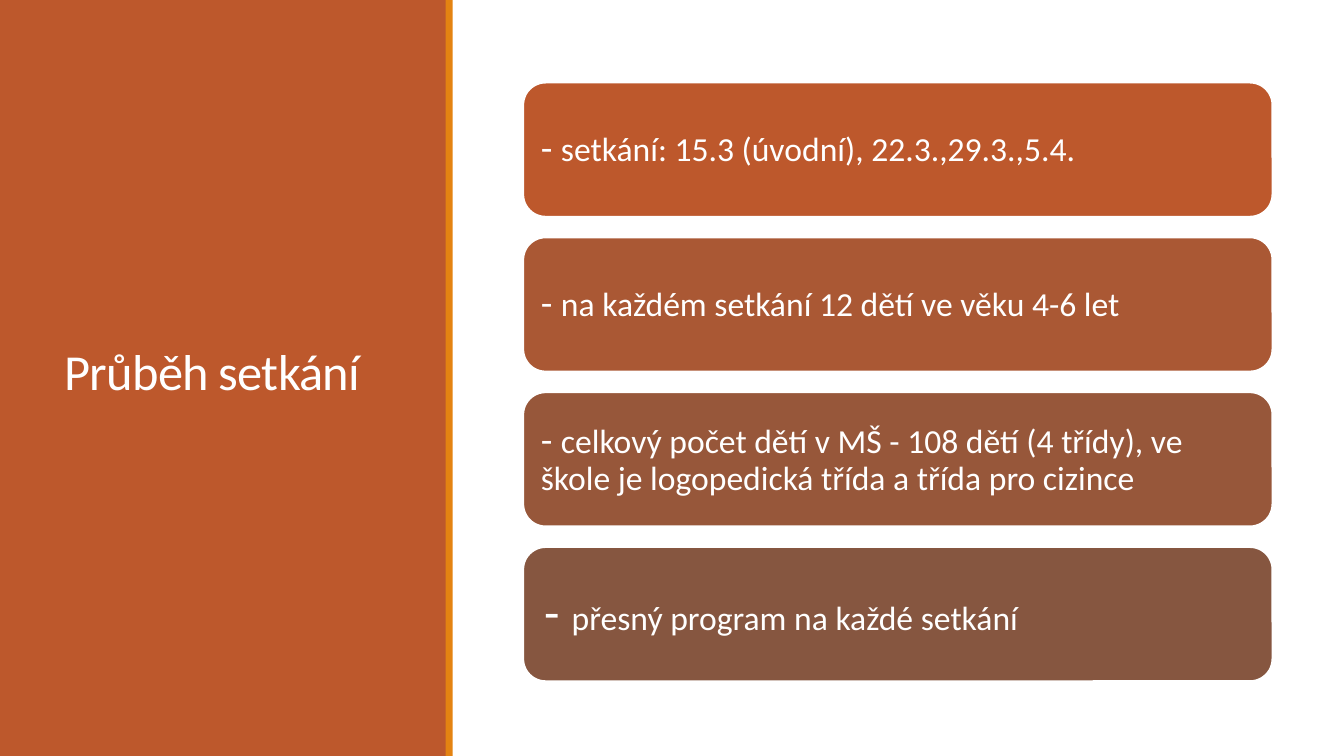
from dataclasses import dataclass

from pptx import Presentation
from pptx.dml.color import RGBColor
from pptx.enum.shapes import MSO_SHAPE as Shape
from pptx.enum.text import MSO_ANCHOR as Anchor, PP_ALIGN as Align
from pptx.util import Inches, Pt

WHITE = RGBColor(0xFF, 0xFF, 0xFF)
RUST = RGBColor(0xBD, 0x58, 0x2C)
ORANGE = RGBColor(0xE4, 0x83, 0x12)
SIENNA = RGBColor(0xAA, 0x58, 0x34)
CLAY = RGBColor(0x97, 0x57, 0x3A)
UMBER = RGBColor(0x86, 0x56, 0x40)

FONT = "Calibri"
WIDTH, HEIGHT = 13.33, 7.5

# Vertical layout: sidebar, stripe, then a column of cards
SIDEBAR_WIDTH = 4.43 / WIDTH
STRIPE_LEFT, STRIPE_WIDTH = 4.42 / WIDTH, 0.07 / WIDTH
CARD_LEFT, CARD_WIDTH = 5.19 / WIDTH, 7.43 / WIDTH
CARD_TOP, CARD_HEIGHT = 0.82 / HEIGHT, 1.33 / HEIGHT
CARD_STEP = 1.536 / HEIGHT


@dataclass(frozen=True)
class Area:
    """A rectangle given in shares of the slide's size."""
    left: float
    top: float
    width: float
    height: float

    def lengths(self) -> tuple:
        return (Inches(self.left * WIDTH), Inches(self.top * HEIGHT),
                Inches(self.width * WIDTH), Inches(self.height * HEIGHT))


@dataclass(frozen=True)
class Card:
    text: str
    fill: RGBColor
    dash_size: float = 27
    inset: float = 0.11


CARDS = [
    Card("setkání: 15.3 (úvodní), 22.3.,29.3.,5.4.", RUST),
    Card("na každém setkání 12 dětí ve věku 4-6 let", SIENNA),
    Card("celkový počet dětí v MŠ - 108 dětí (4 třídy), ve škole je "
         "logopedická třída a třída pro cizince", CLAY),
    Card("přesný program na každé setkání", UMBER, dash_size=36, inset=0.15),
]


def add_block(page, kind: Shape, area: Area, fill: RGBColor):
    block = page.shapes.add_shape(kind, *area.lengths())
    block.shadow.inherit = False
    block.fill.solid()
    block.fill.fore_color.rgb = fill
    block.line.fill.background()
    return block


def set_frame(frame, spacing: float, inset_x: float, inset_y: float):
    """Prepare a wrapped, middle-anchored frame and return its paragraph."""
    frame.word_wrap = True
    frame.vertical_anchor = Anchor.MIDDLE
    frame.margin_left = frame.margin_right = Inches(inset_x)
    frame.margin_top = frame.margin_bottom = Inches(inset_y)
    para = frame.paragraphs[0]
    para.alignment = Align.LEFT
    para.line_spacing = spacing
    return para


def add_text(para, text: str, *, size: float, color: RGBColor = WHITE,
             tracking: float = 0) -> None:
    span = para.add_run()
    span.text = text
    span.font.name = FONT
    span.font.size = Pt(size)
    span.font.color.rgb = color
    if tracking:
        span.font._element.set("spc", str(round(tracking * 100)))


def add_card(page, row: int, card: Card) -> None:
    area = Area(CARD_LEFT, CARD_TOP + row * CARD_STEP, CARD_WIDTH, CARD_HEIGHT)
    box = add_block(page, Shape.ROUNDED_RECTANGLE, area, card.fill)
    box.line.color.rgb = WHITE
    box.line.width = Pt(1.25)
    para = set_frame(box.text_frame, 0.9, card.inset, card.inset)
    add_text(para, "- ", size=card.dash_size)
    add_text(para, card.text, size=24)


def main() -> None:
    deck = Presentation()
    deck.slide_width, deck.slide_height = Inches(WIDTH), Inches(HEIGHT)
    page = deck.slides.add_slide(deck.slide_layouts[6])

    # Sidebar with the title
    add_block(page, Shape.RECTANGLE, Area(0, 0, SIDEBAR_WIDTH, 1), RUST)
    title_area = Area(0.54 / WIDTH, 0.57 / HEIGHT, 3.37 / WIDTH, 6.31 / HEIGHT)
    title = page.shapes.add_textbox(*title_area.lengths())
    para = set_frame(title.text_frame, 0.85, 0.1, 0.05)
    add_text(para, "Průběh setkání", size=36, tracking=-0.5)

    # Accent stripe
    add_block(page, Shape.RECTANGLE, Area(STRIPE_LEFT, 0, STRIPE_WIDTH, 1), ORANGE)

    # Cards
    for row, card in enumerate(CARDS):
        add_card(page, row, card)

    deck.save("out.pptx")


if __name__ == "__main__":
    main()
